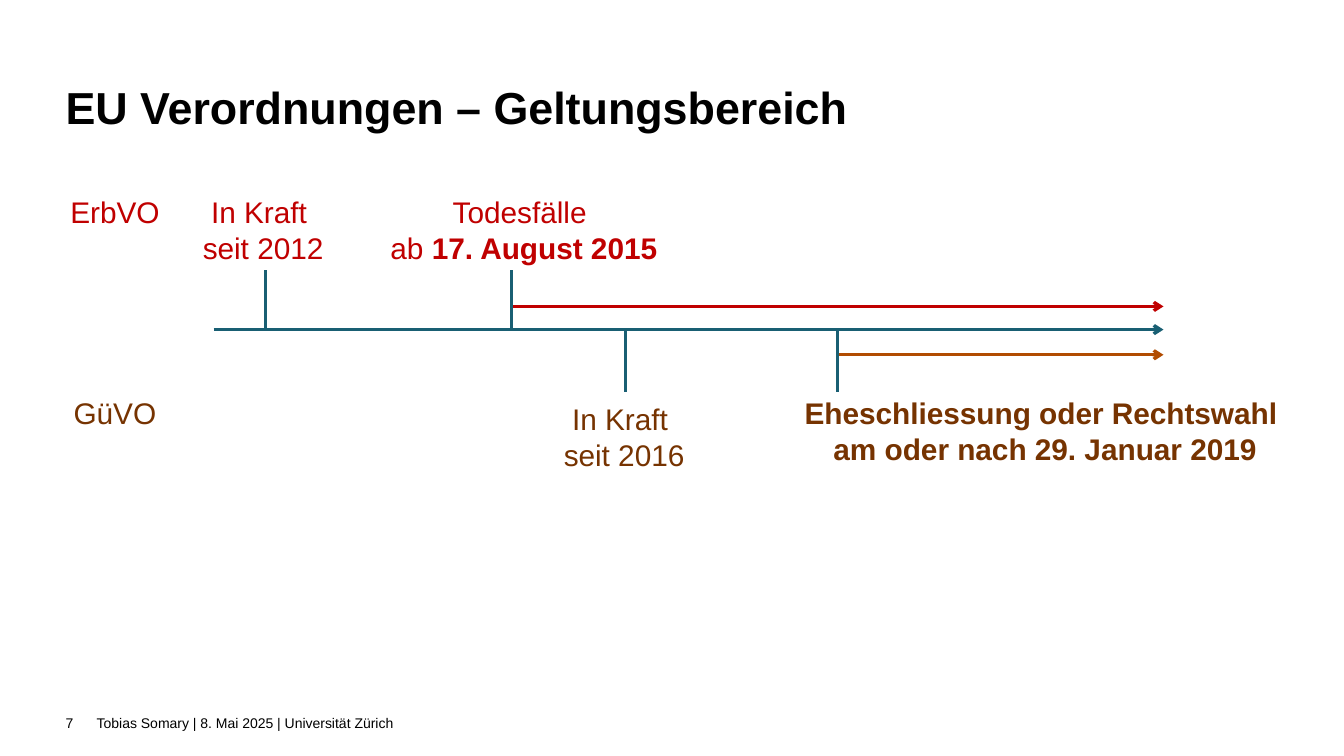
"""Build a timeline slide on the scope of two EU regulations."""
from dataclasses import dataclass

import pptx
import pptx.dml.color
import pptx.enum.shapes
import pptx.enum.text
import pptx.oxml.ns
import pptx.util
from lxml import etree

Inches = pptx.util.Inches
Align = pptx.enum.text.PP_ALIGN
Anchor = pptx.enum.text.MSO_ANCHOR

FONT = "Arial"
BLACK, TEAL, RED, ORANGE, BROWN = "000000", "195F73", "C00000", "B14C01", "763301"
AXIS_X, AXIS_Y = 2.12, 3.27
ARROW_END = 11.54
ERBVO_TOP, ERBVO_TICK = 1.86, 2.68
GUEVO_TOP, GUEVO_TICK = 3.86, 3.89
NARROW, WIDE = 3.1, 5.75


@dataclass(frozen=True)
class Run:
    text: str
    bold: bool = False


@dataclass(frozen=True)
class Label:
    left: float
    top: float
    width: float
    color: str
    lines: tuple[tuple[Run, ...], ...]


@dataclass(frozen=True)
class Line:
    x1: float
    y1: float
    x2: float
    y2: float
    color: str = TEAL
    arrow: bool = False


LABELS = (
    Label(-0.41, ERBVO_TOP, NARROW, RED, ((Run("ErbVO"),),)),
    Label(1.06, ERBVO_TOP, NARROW, RED, ((Run("In Kraft "),), (Run("seit 2012"),))),
    Label(2.32, ERBVO_TOP, WIDE, RED,
          ((Run("Todesfälle "),), (Run("ab "), Run("17. August 2015", True)))),
    Label(-0.41, GUEVO_TOP, NARROW, BROWN, ((Run("GüVO"),),)),
    Label(4.64, 3.92, NARROW, BROWN, ((Run("In Kraft "),), (Run("seit 2016"),))),
    Label(7.49, GUEVO_TOP, WIDE, BROWN,
          ((Run("Eheschliessung oder Rechtswahl ", True),),
           (Run("am oder nach 29. Januar 2019", True),))),
)

LINES = (
    Line(5.07, 3.04, ARROW_END, 3.04, RED, True),
    Line(8.31, 3.52, ARROW_END, 3.52, ORANGE, True),
    Line(AXIS_X, AXIS_Y, ARROW_END, AXIS_Y, arrow=True),
    *(Line(x, ERBVO_TICK, x, AXIS_Y) for x in (2.63, 5.07)),
    *(Line(x, AXIS_Y, x, GUEVO_TICK) for x in (6.2, 8.31)),
)


def rgb(color: str) -> pptx.dml.color.RGBColor:
    return pptx.dml.color.RGBColor.from_string(color)


def add_run(p, run: Run, size: float, color: str) -> None:
    r = p.add_run()
    r.text = run.text
    r.font.name = FONT
    r.font.size = pptx.util.Pt(size)
    r.font.bold = run.bold
    r.font.color.rgb = rgb(color)


def set_frame(tf, anchor, margin_x: float = 0, margin_y: float = 0) -> None:
    tf.word_wrap = True
    tf.auto_size = pptx.enum.text.MSO_AUTO_SIZE.NONE
    tf.vertical_anchor = anchor
    tf.margin_left = tf.margin_right = Inches(margin_x)
    tf.margin_top = tf.margin_bottom = Inches(margin_y)


def add_title(s, text: str) -> None:
    sp = s.shapes.title
    sp.left, sp.top, sp.width, sp.height = map(Inches, (0.65, 0.85, 12.03, 0.98))
    set_frame(sp.text_frame, Anchor.TOP)
    p = sp.text_frame.paragraphs[0]
    p.alignment = Align.LEFT
    p.line_spacing = 0.9
    add_run(p, Run(text, True), 32, BLACK)


def add_footer(s, left: float, width: float, text: str) -> None:
    sp = s.shapes.add_textbox(*map(Inches, (left, 6.85, width, 0.65)))
    set_frame(sp.text_frame, Anchor.MIDDLE)
    add_run(sp.text_frame.paragraphs[0], Run(text), 10, BLACK)


def add_label(s, label: Label) -> None:
    height = 0.12 + 0.36 * len(label.lines)
    sp = s.shapes.add_textbox(*map(Inches, (label.left, label.top, label.width, height)))
    tf = sp.text_frame
    set_frame(tf, Anchor.TOP, 0.12, 0.06)
    for i, line in enumerate(label.lines):
        p = tf.add_paragraph() if i else tf.paragraphs[0]
        p.alignment = Align.CENTER
        for run in line:
            add_run(p, run, 21.3, label.color)


def add_line(s, line: Line) -> None:
    ends = map(Inches, (line.x1, line.y1, line.x2, line.y2))
    sp = s.shapes.add_connector(pptx.enum.shapes.MSO_CONNECTOR.STRAIGHT, *ends)
    sp.line.color.rgb = rgb(line.color)
    sp.line.width = pptx.util.Pt(2.25)
    if line.arrow:
        ln = sp.line._get_or_add_ln()
        etree.SubElement(ln, pptx.oxml.ns.qn("a:tailEnd"), type="arrow")
    etree.SubElement(sp._element.spPr, pptx.oxml.ns.qn("a:effectLst"))


def main() -> None:
    prs = pptx.Presentation()
    prs.slide_width, prs.slide_height = Inches(13.33), Inches(7.5)
    s = prs.slides.add_slide(prs.slide_layouts.get_by_name("Title Only"))
    add_title(s, "EU Verordnungen – Geltungsbereich")
    add_footer(s, 0.65, 0.31, "7")
    add_footer(s, 0.96, 4.7, "Tobias Somary | 8. Mai 2025 | Universität Zürich")
    for line in LINES:
        add_line(s, line)
    for label in LABELS:
        add_label(s, label)
    prs.save("out.pptx")


if __name__ == "__main__":
    main()
